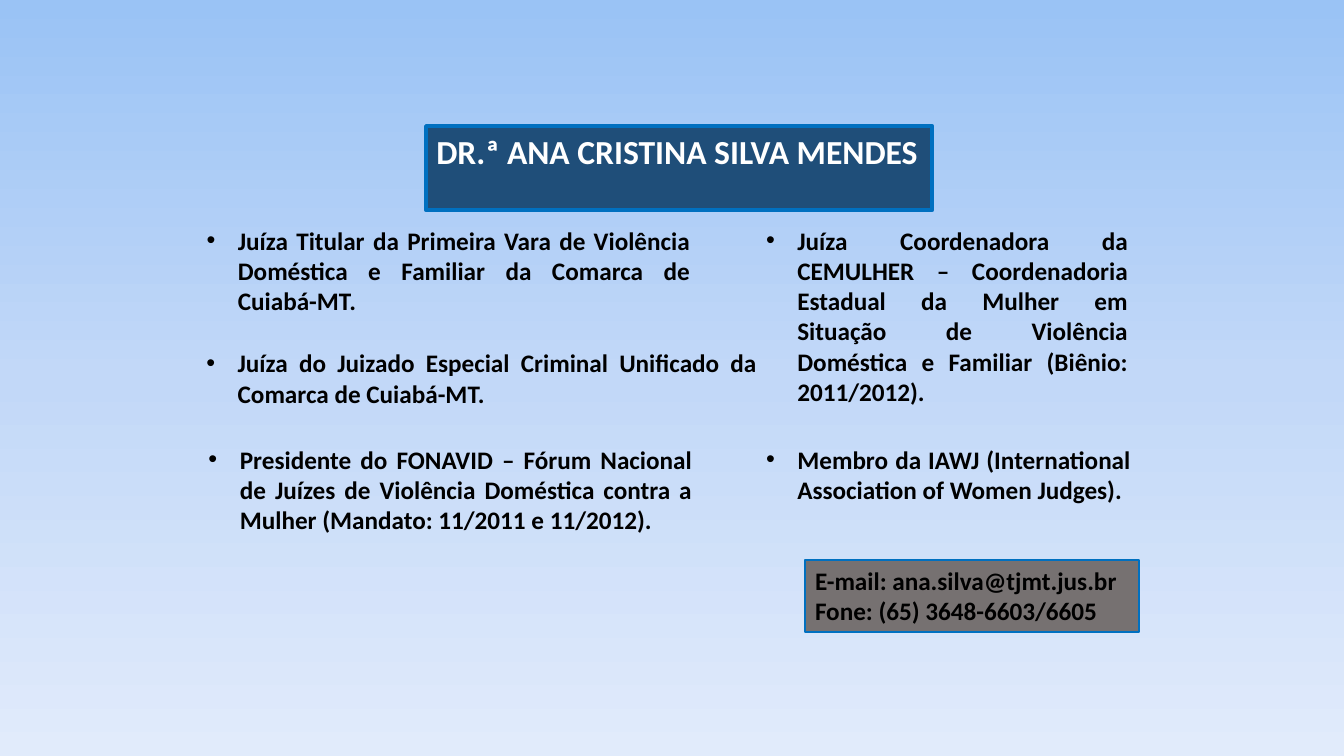
from copy import deepcopy

from lxml import etree
from pptx import Presentation
from pptx.dml.color import RGBColor
from pptx.enum import shapes, text
from pptx.oxml import ns
from pptx.util import Cm, Pt

SKY = RGBColor(0x9A, 0xC3, 0xF5)
MIST = RGBColor(0xC2, 0xD8, 0xF8)
PALE = RGBColor(0xE1, 0xEB, 0xFB)
NAVY = RGBColor(0x1F, 0x4E, 0x79)
BLUE = RGBColor(0x00, 0x70, 0xC0)
GRAY = RGBColor(0x76, 0x71, 0x71)
WHITE = RGBColor(0xFF, 0xFF, 0xFF)
BLACK = RGBColor(0x00, 0x00, 0x00)

FONT = "Calibri"
LEFT, RIGHT = 4.95, 19.05
TOP, BOTTOM = 5.54, 11.06
INDENT = Cm(0.79)

PLACED_ITEMS = [
    (1, (LEFT, TOP, 12.7, 2.57),
     "Juíza Titular da Primeira Vara de Violência Doméstica e Familiar da Comarca de Cuiabá-MT."),
    (2, (5.0, BOTTOM, 12.7, 2.57),
     "Presidente do FONAVID – Fórum Nacional de Juízes de Violência Doméstica contra a Mulher "
     "(Mandato: 11/2011 e 11/2012)."),
    (3, (RIGHT, TOP, 9.63, 4.88),
     "Juíza Coordenadora da CEMULHER – Coordenadoria Estadual da Mulher em Situação de Violência "
     "Doméstica e Familiar (Biênio: 2011/2012)."),
    (4, (RIGHT, BOTTOM, 9.7, 1.8),
     "Membro da IAWJ (International Association of Women Judges)."),
]
WIDE_BOX = (LEFT, 8.64, 14.38, 1.8)
WIDE_ITEM = "Juíza do Juizado Especial Criminal Unificado da Comarca de Cuiabá-MT."


def paint_background(s):
    fill = s.background.fill
    fill.gradient()
    fill.gradient_angle = 270
    gs_list = s.element.find(".//" + ns.qn("a:gsLst"))
    gs_list.insert(1, deepcopy(gs_list[0]))
    for stop, color, position in zip(fill.gradient_stops, (SKY, MIST, PALE), (0, 0.5, 1)):
        stop.color.rgb = color
        stop.position = position


def place(sp, box):
    sp.left, sp.top, sp.width, sp.height = map(Cm, box)


def paint_box(sp, color, line_width):
    sp.fill.solid()
    sp.fill.fore_color.rgb = color
    sp.line.color.rgb = BLUE
    sp.line.width = Pt(line_width)


def write(sp, content, size, color, align, wrap=True):
    tf = sp.text_frame
    tf.text = content
    tf.word_wrap = wrap
    tf.auto_size = text.MSO_AUTO_SIZE.SHAPE_TO_FIT_TEXT
    tf.vertical_anchor = text.MSO_ANCHOR.TOP
    for p in tf.paragraphs:
        p.alignment = align
        p.space_before = Pt(0)
        for r in p.runs:
            r.font.name = FONT
            r.font.size = Pt(size)
            r.font.bold = True
            r.font.color.rgb = color


def write_bullet(sp, content):
    write(sp, content, 18, BLACK, text.PP_ALIGN.JUSTIFY)
    for p in sp.text_frame.paragraphs:
        pPr = p._p.get_or_add_pPr()
        pPr.set("marL", str(INDENT))
        pPr.set("indent", str(-INDENT))
        etree.SubElement(pPr, ns.qn("a:buFont"), typeface="Arial")
        etree.SubElement(pPr, ns.qn("a:buChar"), char="•")


def add_heading(s):
    sp = s.shapes.title
    place(sp, (10.74, 3.18, 12.75, 1.27))
    paint_box(sp, NAVY, 3)
    write(sp, "DR.ª ANA CRISTINA SILVA MENDES", 24, WHITE, text.PP_ALIGN.LEFT, wrap=False)


def add_contact(s):
    sp = s.shapes.add_shape(shapes.MSO_SHAPE.RECTANGLE, Cm(20.29), Cm(14.12), Cm(8.41), Cm(1.8))
    sp.shadow.inherit = False
    paint_box(sp, GRAY, 1.5)
    write(sp, "E-mail: ana.silva@tjmt.jus.br\nFone: (65) 3648-6603/6605", 18, BLACK,
          text.PP_ALIGN.JUSTIFY)


def main():
    prs = Presentation()
    prs.slide_width, prs.slide_height = Cm(33.87), Cm(19.05)
    s = prs.slides.add_slide(prs.slide_layouts.get_by_name("Comparison"))
    paint_background(s)
    add_heading(s)
    for idx, box, content in PLACED_ITEMS:
        sp = s.placeholders[idx]
        place(sp, box)
        write_bullet(sp, content)
    add_contact(s)
    write_bullet(s.shapes.add_textbox(*map(Cm, WIDE_BOX)), WIDE_ITEM)
    prs.save("out.pptx")


if __name__ == "__main__":
    main()
